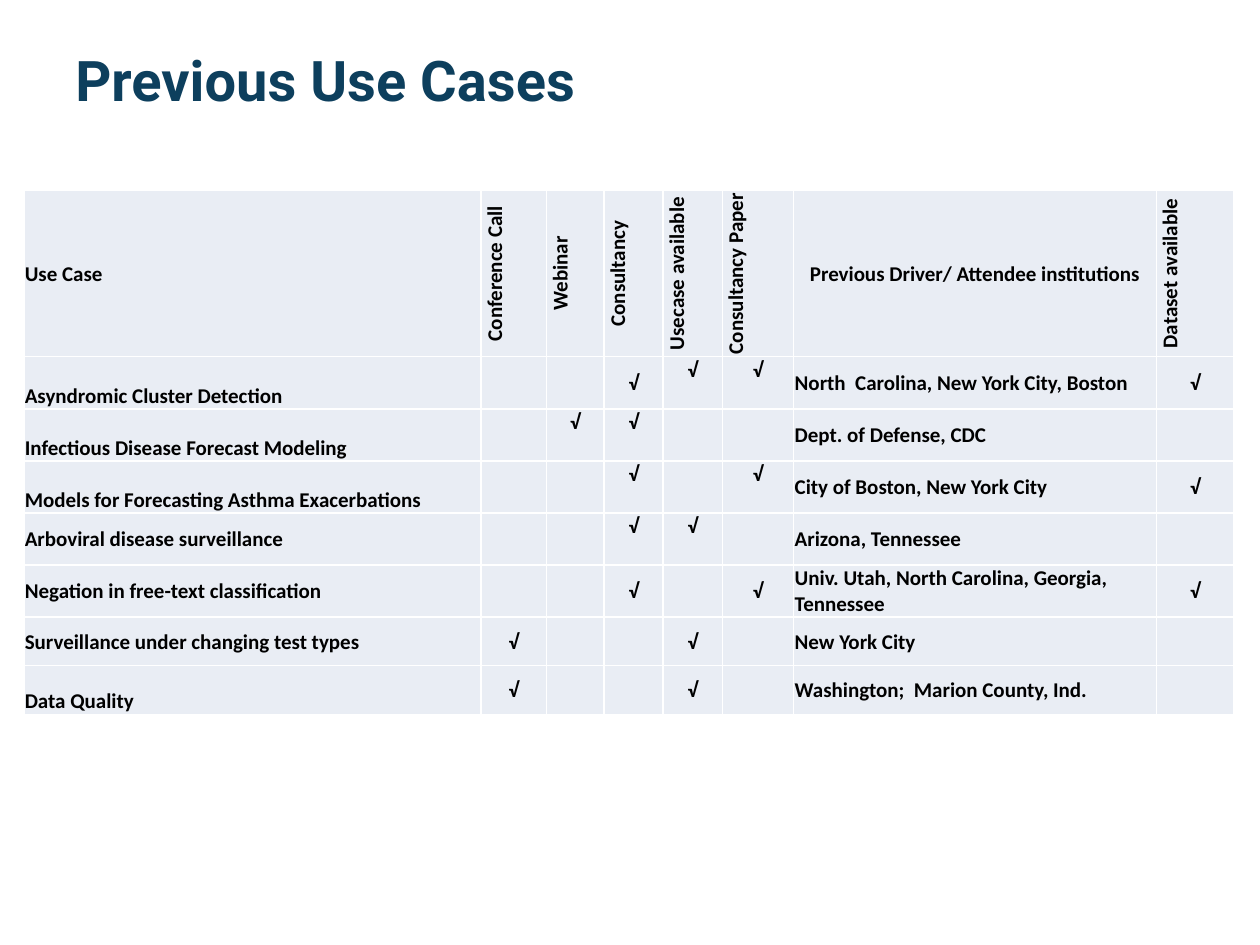
from lxml import etree
from pptx import Presentation
from pptx.dml.color import RGBColor
from pptx.enum.text import MSO_ANCHOR, PP_ALIGN
from pptx.oxml.ns import qn
from pptx.util import Cm, Pt

LEFT, CENTER = PP_ALIGN.LEFT, PP_ALIGN.CENTER
TOP, MIDDLE, BOTTOM = MSO_ANCHOR.TOP, MSO_ANCHOR.MIDDLE, MSO_ANCHOR.BOTTOM
COLORS = {"title": "0D3F5D", "text": "000000", "cell": "E9EDF4", "line": "FFFFFF"}
CHECK = "√"


def write(frame, text, font="Calibri", size=12, color="text", align=LEFT):
    para = frame.paragraphs[0]
    para.alignment = align
    run = para.add_run()
    run.text = text
    run.font.name = font
    run.font.size = Pt(size)
    run.font.bold = True
    run.font.color.rgb = RGBColor.from_string(COLORS[color])


def style(cell):
    """Set the margins, white borders and fill of a cell."""
    cell.margin_left = cell.margin_right = cell.margin_top = Cm(0.02)
    cell.margin_bottom = 0
    props = cell._tc.get_or_add_tcPr()
    for side in ("lnL", "lnR", "lnT", "lnB"):
        line = etree.SubElement(props, qn(f"a:{side}"), w=str(Pt(1)))
        fill = etree.SubElement(line, qn("a:solidFill"))
        etree.SubElement(fill, qn("a:srgbClr"), val=COLORS["line"])
    cell.fill.solid()
    cell.fill.fore_color.rgb = RGBColor.from_string(COLORS["cell"])


deck = Presentation()
deck.slide_width, deck.slide_height = Cm(25.4), Cm(19.05)
slide = deck.slides.add_slide(deck.slide_layouts[6])

title = slide.shapes.add_textbox(Cm(1.27), 0, Cm(18.5), Cm(3.18)).text_frame
title.word_wrap = True
title.vertical_anchor = MIDDLE
write(title, "Previous Use Cases", font="Roboto", size=32, color="title")

heads = ["Use Case", "Conference Call", "Webinar", "Consultancy", "Usecase available",
         "Consultancy Paper", "Previous Driver/ Attendee institutions",
         "Dataset available"]
PLACE = heads.index("Previous Driver/ Attendee institutions")

# Name, its anchor, institutions, checked columns, those checked at the top
cases = [
    ("Asyndromic Cluster Detection", BOTTOM,
     "North  Carolina, New York City, Boston", (3, 4, 5, 7), (4, 5)),
    ("Infectious Disease Forecast Modeling", BOTTOM,
     "Dept. of Defense, CDC", (2, 3), (2, 3)),
    ("Models for Forecasting Asthma Exacerbations", BOTTOM,
     "City of Boston, New York City", (3, 5, 7), (3, 5)),
    ("Arboviral disease surveillance", MIDDLE, "Arizona, Tennessee", (3, 4), (3, 4)),
    ("Negation in free-text classification", MIDDLE,
     "Univ. Utah, North Carolina, Georgia, Tennessee", (3, 5, 7), ()),
    ("Surveillance under changing test types", MIDDLE, "New York City", (1, 4), ()),
    ("Data Quality", BOTTOM, "Washington;  Marion County, Ind.", (1, 4), ()),
]
widths = [9.22, 1.32, 1.16, 1.19, 1.19, 1.44, 7.31, 1.57]
heights = [3.35] + [1.05] * 5 + [0.98] * 2

table = slide.shapes.add_table(len(heights), len(widths), Cm(0.48), Cm(3.84),
                               Cm(sum(widths)), Cm(sum(heights))).table
table.first_row = table.horz_banding = False
for col, width in zip(table.columns, widths):
    col.width = Cm(width)
for row, height in zip(table.rows, heights):
    row.height = Cm(height)
for cell in table.iter_cells():
    style(cell)

for i, head in enumerate(heads):
    cell = table.cell(0, i)
    cell.vertical_anchor = MIDDLE
    if i not in (0, PLACE):
        cell._tc.get_or_add_tcPr().set("vert", "vert270")
    write(cell.text_frame, head, align=CENTER if i else LEFT)

for r, (name, anchor, place, checks, tops) in enumerate(cases, 1):
    for i, text, pos in ((0, name, anchor), (PLACE, place, MIDDLE)):
        cell = table.cell(r, i)
        cell.vertical_anchor = pos
        write(cell.text_frame, text)
    for i in checks:
        cell = table.cell(r, i)
        cell.vertical_anchor = TOP if i in tops else MIDDLE
        write(cell.text_frame, CHECK, align=CENTER)

deck.save("out.pptx")
